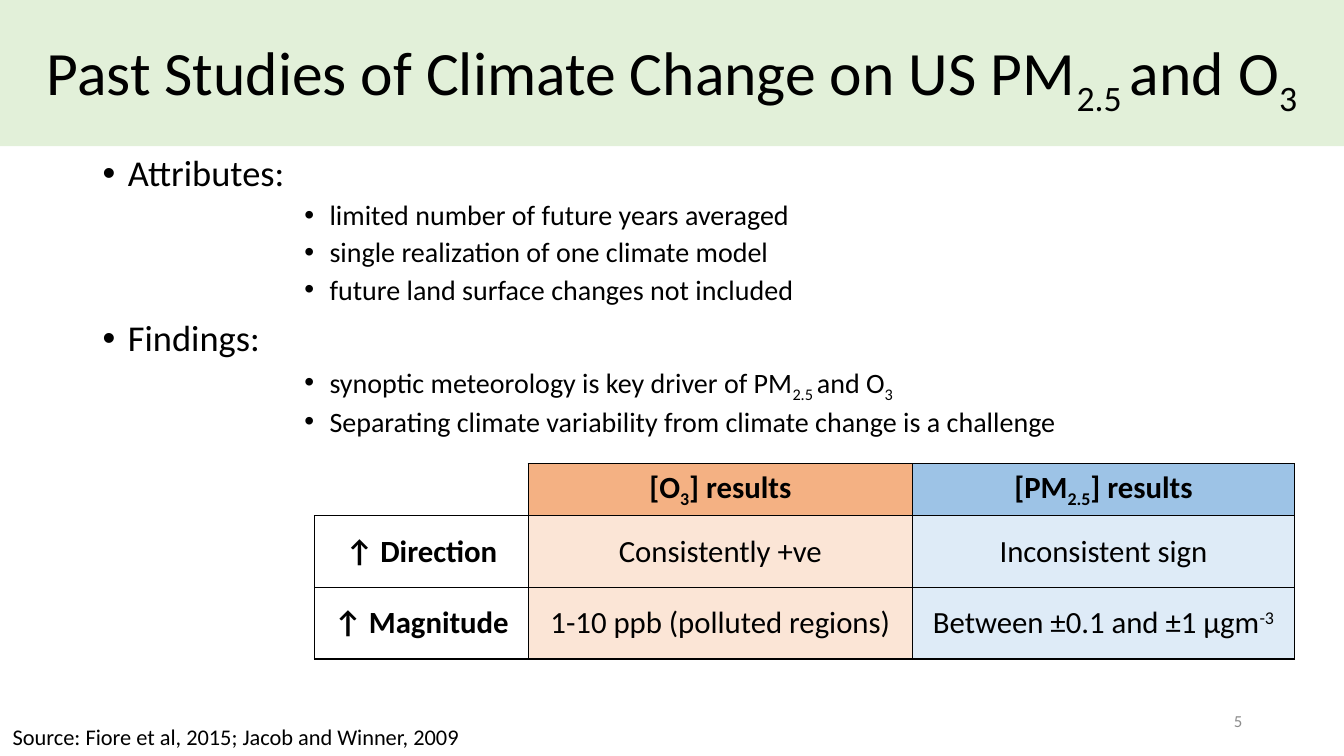
import pptx
import pptx.util
import pptx.dml.color
import pptx.enum.shapes
import pptx.enum.text
import pptx.oxml
import pptx.oxml.ns
from lxml import etree

Inches = pptx.util.Inches
Align = pptx.enum.text.PP_ALIGN
Anchor = pptx.enum.text.MSO_ANCHOR
SHIFT = {"_": "-25000", "^": "30000"}


def color(code):
    return pptx.dml.color.RGBColor.from_string(code)


def write(para, text, size=22, bold=False, ink="000000", align=Align.CENTER):
    para.alignment = align
    for part in text.split("|"):
        shift = SHIFT.get(part[0])
        run = para.add_run()
        run.text = part[1:] if shift else part
        font = run.font
        font.name = "Calibri"
        font.size = pptx.util.Pt(size)
        font.bold = bold
        font.color.rgb = color(ink)
        if shift:
            run._r.get_or_add_rPr().set("baseline", shift)


def child(parent, tag, **attrs):
    return etree.SubElement(parent, pptx.oxml.ns.qn(tag), attrs)


class Deck:
    def __init__(self):
        self.file = pptx.Presentation()
        self.file.slide_width = Inches(13.33)
        self.file.slide_height = Inches(7.5)
        self.slide = self.file.slides.add_slide(self.file.slide_layouts[6])
        self.shapes = self.slide.shapes

    def band(self, box, fill, text, size):
        kind = pptx.enum.shapes.MSO_SHAPE.RECTANGLE
        shape = self.shapes.add_shape(kind, *map(Inches, box))
        shape.shadow.inherit = False
        shape.fill.solid()
        shape.fill.fore_color.rgb = color(fill)
        shape.line.fill.background()
        frame = shape.text_frame
        frame.word_wrap = True
        frame.vertical_anchor = Anchor.MIDDLE
        frame.paragraphs[0].line_spacing = 0.9
        write(frame.paragraphs[0], text, size)

    def frame(self, box, anchor=Anchor.TOP):
        frame = self.shapes.add_textbox(*map(Inches, box)).text_frame
        frame.word_wrap = True
        frame.vertical_anchor = anchor
        return frame

    def label(self, box, text, anchor=Anchor.TOP, **style):
        write(self.frame(box, anchor).paragraphs[0], text, **style)

    def bullets(self, box, groups):
        frame = self.frame(box)
        lines = []
        for head, points in groups:
            lines.append((head, 26, 10, 0.25, 0))
            lines += [(point, 20, 5, 2.25, 4) for point in points]
        for i, (text, size, gap, left, level) in enumerate(lines):
            para = frame.add_paragraph() if i else frame.paragraphs[0]
            para.level = level
            para.line_spacing = 0.9
            para.space_before = pptx.util.Pt(gap)
            write(para, text, size, align=Align.LEFT)
            props = para._p.get_or_add_pPr()
            props.set("marL", str(Inches(left)))
            props.set("indent", str(Inches(-0.25)))
            child(props, "a:buFont", typeface="Arial")
            child(props, "a:buChar", char="•")

    def border(self, cell, sides):
        props = cell._tc.get_or_add_tcPr()
        for side in "LRTB":
            line = child(props, "a:ln" + side, w=str(pptx.util.Pt(1)))
            if side in sides:
                child(child(line, "a:solidFill"), "a:srgbClr", val="000000")
            else:
                child(line, "a:noFill")

    def table(self, box, widths, heights, rows, fills):
        size = len(heights), len(widths)
        grid = self.shapes.add_table(*size, *map(Inches, box)).table
        grid.first_row = grid.horz_banding = False
        for col, width in zip(grid.columns, widths):
            col.width = Inches(width)
        for row, height in zip(grid.rows, heights):
            row.height = Inches(height)
        for r, texts in enumerate(rows):
            for c, text in enumerate(texts):
                cell = grid.cell(r, c)
                cell.vertical_anchor = Anchor.MIDDLE
                self.border(cell, "LRTB" if text else "RB")
                fill = fills[min(r, 1)][c]
                if fill:
                    cell.fill.solid()
                    cell.fill.fore_color.rgb = color(fill)
                else:
                    cell.fill.background()
                if text:
                    para = cell.text_frame.paragraphs[0]
                    write(para, text, bold=r == 0 or c == 0)


def main():
    deck = Deck()
    deck.band((0, 0, 13.33, 1.45), "E2F0D9",
              "Past Studies of Climate Change on US PM|_2.5 |and O|_3", 44)
    deck.bullets((0.92, 1.49, 11.5, 5.12), [
        ("Attributes:", [
            "limited number of future years averaged",
            "single realization of one climate model",
            "future land surface changes not included",
        ]),
        ("Findings:", [
            "synoptic meteorology is key driver of PM|_2.5 |and O|_3",
            "Separating climate variability from climate change is a challenge",
        ]),
    ])
    deck.label((9.42, 6.95, 3, 0.4), "5", Anchor.MIDDLE,
               size=12, ink="8C8C8C", align=Align.RIGHT)
    deck.table((3.12, 4.6, 9.72, 1.92), (2.12, 3.81, 3.79), (0.5, 0.71, 0.71), [
        ("", "[O|_3|] results", "[PM|_2.5|] results"),
        ("↑ Direction", "Consistently +ve", "Inconsistent sign"),
        ("↑ Magnitude", "1-10 ppb (polluted regions)",
         "Between ±0.1 and ±1 µgm|^-3"),
    ], [(None, "F4B183", "9DC3E6"), (None, "FBE5D6", "DEEBF7")])
    deck.label((0, 7.13, 4.68, 0.37),
               "Source: Fiore et al, 2015; Jacob and Winner, 2009", size=16)
    deck.file.save("out.pptx")


if __name__ == "__main__":
    main()
